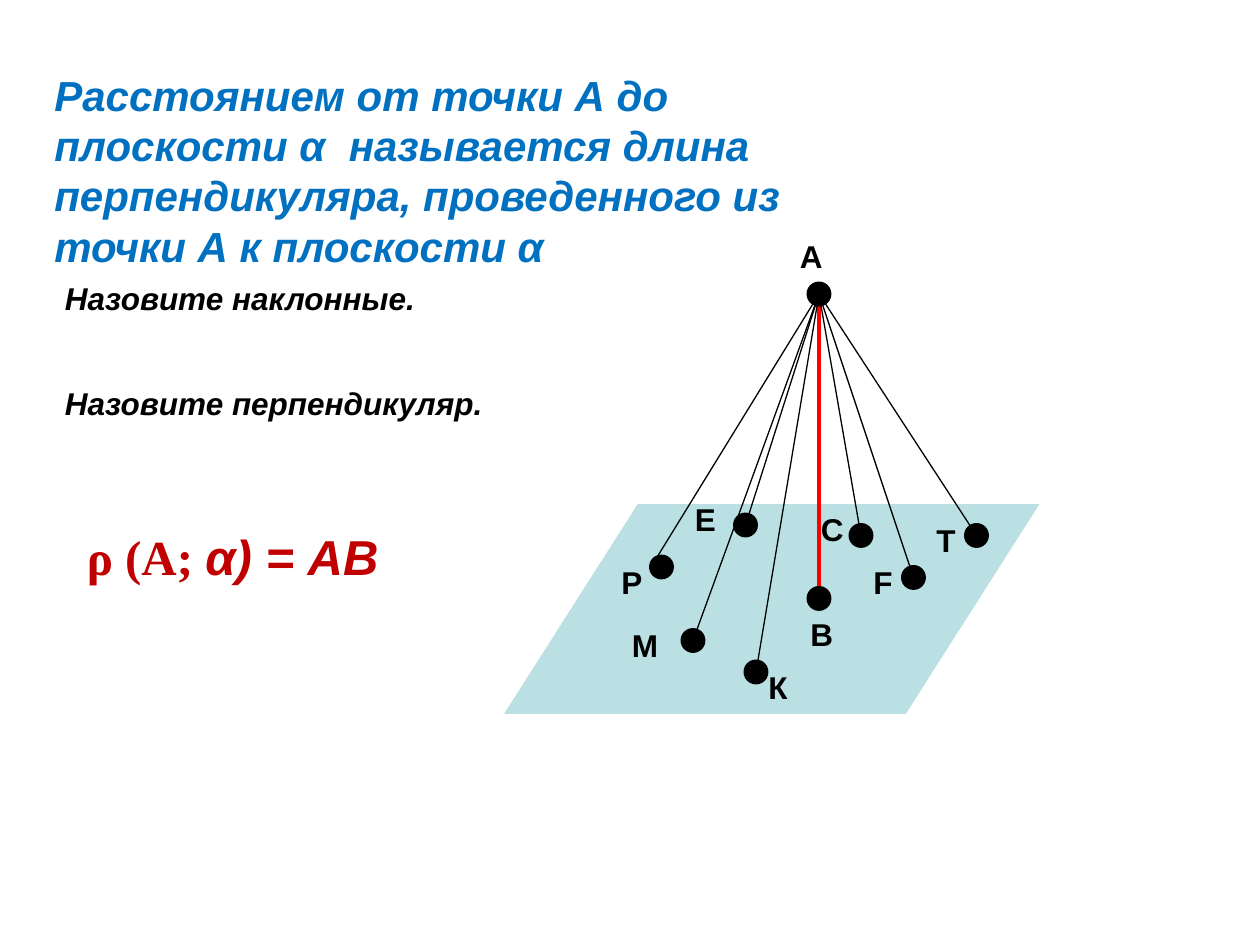
from lxml import etree
from pptx import Presentation
from pptx.dml.color import RGBColor
from pptx.enum import shapes, text
from pptx.oxml.ns import qn
from pptx.util import Pt

COLORS = {"plane": "BBE0E3", "ink": "000000", "perpendicular": "FF0000",
          "definition": "0070C0", "formula": "C00000"}
DOT = 12
APEX = (468, 168)
# name: (dot centre, label left, label top, label width)
POINTS = {
    "А": (APEX, 450, 132, 36),
    "В": ((468, 342), 456, 348, 42),
    "М": ((396, 366), 354, 354, 42),
    "С": ((492, 306), 462, 288, 30),
    "К": ((432, 384), 432, 378, 30),
    "Р": ((378, 324), 348, 318, 36),
    "Е": ((426, 300), 390, 282, 42),
    "Т": ((558, 306), 528, 294, 30),
    "F": ((522, 330), 492, 318, 30),
}
LINE_ENDS = {"Р": (372, 324)}  # this line meets the left edge of its dot


def rgb(name):
    return RGBColor.from_string(COLORS[name])


def add_filled(s, kind, x, y, w, h, color):
    sp = s.shapes.add_shape(kind, Pt(x), Pt(y), Pt(w), Pt(h))
    sp.shadow.inherit = False
    sp.fill.solid()
    sp.fill.fore_color.rgb = rgb(color)
    sp.line.fill.background()
    return sp


def add_dot(s, center):
    x, y = center
    sp = add_filled(s, shapes.MSO_SHAPE.OVAL, x - DOT / 2, y - DOT / 2, DOT, DOT, "ink")
    sp.line.color.rgb = rgb("ink")
    sp.line.width = Pt(2.25)


def add_line(s, start, end, color="ink", width=0.75):
    line = s.shapes.add_connector(shapes.MSO_CONNECTOR.STRAIGHT,
                                  *(Pt(v) for v in (*start, *end)))
    line.line.color.rgb = rgb(color)
    line.line.width = Pt(width)
    etree.SubElement(line._element.spPr, qn("a:effectLst"))


def add_text(s, x, y, w, h, runs, size=18, color="ink", italic=False):
    """Add a bold text box; runs is a list of (text, font name, italic)
    or a plain string set in Arial."""
    box = s.shapes.add_textbox(Pt(x), Pt(y), Pt(w), Pt(h))
    tf = box.text_frame
    tf.word_wrap = True
    tf.auto_size = text.MSO_AUTO_SIZE.SHAPE_TO_FIT_TEXT
    p = tf.paragraphs[0]
    p.font.size = Pt(size)
    p.font.bold = True
    p.font.color.rgb = rgb(color)
    if isinstance(runs, str):
        p.font.name = "Arial"
        p.font.italic = italic
        p.add_run().text = runs
        return
    for words, font, slanted in runs:
        r = p.add_run()
        r.text = words
        r.font.name = font
        r.font.italic = slanted


def add_diagram(s):
    plane = add_filled(s, shapes.MSO_SHAPE.PARALLELOGRAM, 288, 288, 306, 120, "plane")
    plane.adjustments[0] = 0.637
    add_line(s, APEX, POINTS["В"][0], "perpendicular", 2.25)
    for name, (center, *_) in POINTS.items():
        if name not in "АВ":
            add_line(s, APEX, LINE_ENDS.get(name, center))
    for center, *_ in POINTS.values():
        add_dot(s, center)
    for name, (_, x, y, w) in POINTS.items():
        add_text(s, x, y, w, 29, name)


def main():
    prs = Presentation()
    prs.slide_width, prs.slide_height = Pt(720), Pt(540)
    s = prs.slides.add_slide(prs.slide_layouts[6])
    add_diagram(s)
    add_text(s, 24, 36, 438, 124,
             "Расстоянием от точки А до плоскости α  называется длина "
             "перпендикуляра, проведенного из точки А к плоскости α",
             24, "definition", True)
    add_text(s, 30, 156, 372, 29, "Назовите наклонные.", italic=True)
    add_text(s, 30, 216, 360, 29, "Назовите перпендикуляр.", italic=True)
    add_text(s, 42.5, 297.5, 228, 41,
             [("ρ (A; ", "Times New Roman", False), ("α) = AB", "Arial", True)],
             28, "formula")
    prs.save("out.pptx")


if __name__ == "__main__":
    main()
